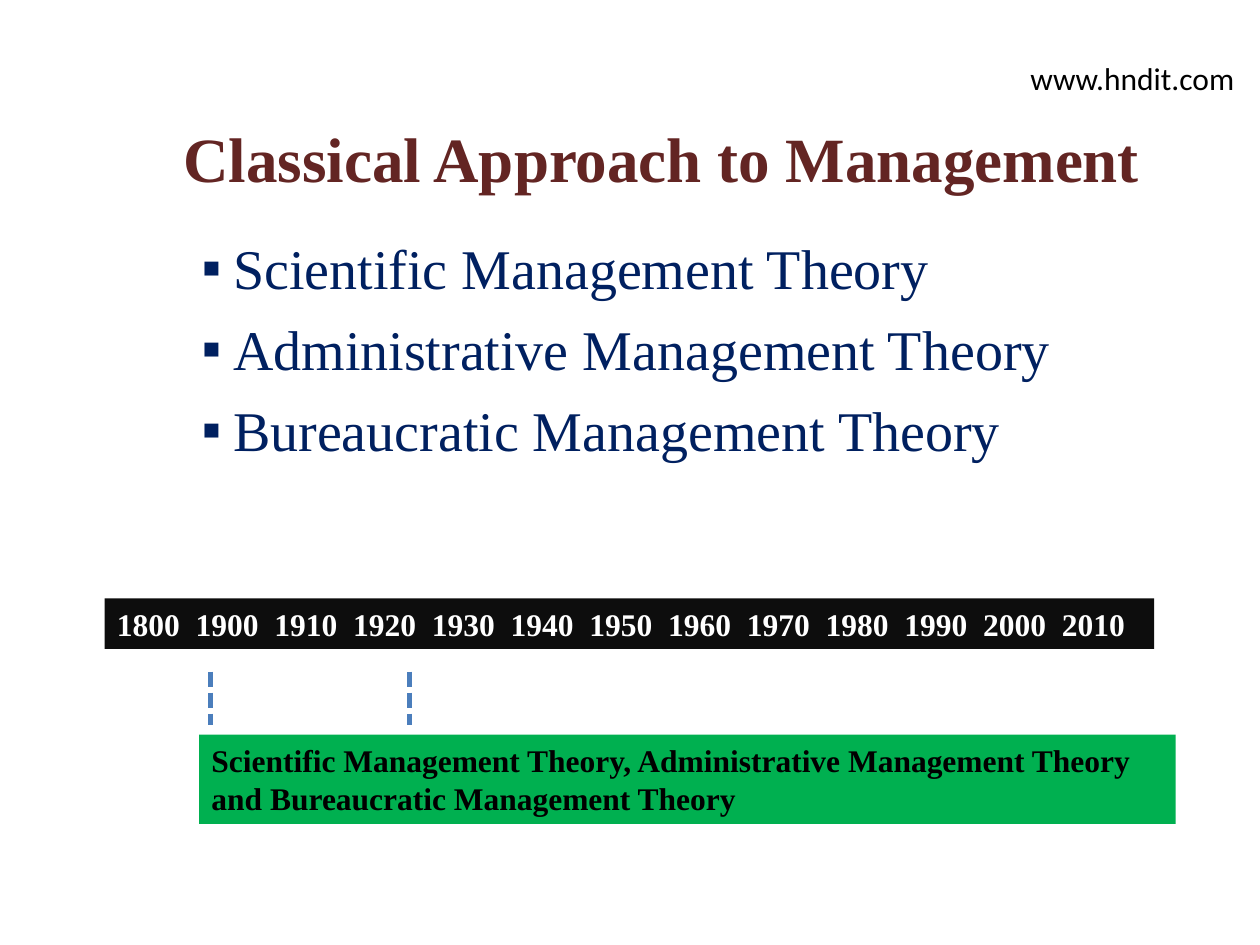
from lxml.etree import SubElement
from pptx import Presentation
from pptx.dml.color import RGBColor
from pptx.enum.dml import MSO_LINE
from pptx.enum.shapes import MSO_CONNECTOR, MSO_SHAPE
from pptx.enum.text import MSO_ANCHOR, PP_ALIGN
from pptx.oxml.ns import qn
from pptx.util import Inches, Pt

TITLE = "Classical Approach to Management"
THEORIES = [
    "Scientific Management Theory",
    "Administrative Management Theory",
    "Bureaucratic Management Theory",
]
YEARS = [1800, *range(1900, 2011, 10)]
PERIOD = ("Scientific Management Theory, Administrative Management Theory "
          "and Bureaucratic Management Theory")
SITE = "www.hndit.com"

COLORS = {"title": "632523", "list": "002060", "axis": "0D0D0D", "year": "FFFFFF",
          "period": "00B050", "text": "000000", "marker": "4B7EBC"}
SERIF = "Times New Roman"
YEAR_STEP = 0.625
MARKERS = (1.67, 3.25)
MARKER_TOP, MARKER_BOTTOM = 5.33, 5.75


def color(name):
    return RGBColor.from_string(COLORS[name])


def place(s, left, top, width, height):
    s.left, s.top, s.width, s.height = map(Inches, (left, top, width, height))


def style(p, size, color_name, bold=False, name=SERIF):
    for r in p.runs:
        r.font.name, r.font.size, r.font.bold = name, Pt(size), bold
        r.font.color.rgb = color(color_name)


def add_bar(slide, box, fill, text, text_color):
    s = slide.shapes.add_shape(MSO_SHAPE.RECTANGLE, *map(Inches, box))
    s.shadow.inherit = False
    s.fill.solid()
    s.fill.fore_color.rgb = color(fill)
    s.line.fill.background()
    tf = s.text_frame
    tf.word_wrap = True
    tf.vertical_anchor = MSO_ANCHOR.TOP
    tf.text = text
    p = tf.paragraphs[0]
    p.alignment = PP_ALIGN.LEFT
    style(p, 18, text_color, bold=True)
    return p


def add_marker(slide, x):
    line = slide.shapes.add_connector(
        MSO_CONNECTOR.STRAIGHT, *map(Inches, (x, MARKER_TOP, x, MARKER_BOTTOM)))
    line.line.color.rgb = color("marker")
    line.line.width = Pt(3)
    line.line.dash_style = MSO_LINE.SQUARE_DOT
    SubElement(line._element.spPr, qn("a:effectLst"))


def main():
    prs = Presentation()
    prs.slide_width, prs.slide_height = Inches(10), Inches(7.5)
    slide = prs.slides.add_slide(prs.slide_layouts[1])
    title, body = slide.placeholders

    place(title, 0.75, 0.85, 9, 0.8)
    title.text_frame.text = TITLE
    title.text_frame.vertical_anchor = MSO_ANCHOR.MIDDLE
    style(title.text_frame.paragraphs[0], 36, "title", bold=True)

    place(body, 0.5, 1.8, 9, 2.7)
    tf = body.text_frame
    tf.text = "\n".join(THEORIES)
    for i, p in enumerate(tf.paragraphs):
        p.level = 2
        p.space_before = Pt(8 if i else 0)
        pPr = p._p.get_or_add_pPr()
        SubElement(pPr, qn("a:buFont"), typeface="Arial")
        SubElement(pPr, qn("a:buChar"), char="▪")
        style(p, 32, "list")

    axis = add_bar(slide, (0.83, 4.75, 8.33, 0.4), "axis",
                   "\t".join(map(str, YEARS)), "year")
    tabs = SubElement(axis._p.get_or_add_pPr(), qn("a:tabLst"))
    for i in range(1, len(YEARS)):
        SubElement(tabs, qn("a:tab"), pos=str(Inches(i * YEAR_STEP)), algn="l")

    add_bar(slide, (1.58, 5.83, 7.75, 0.71), "period", PERIOD, "text")
    for x in MARKERS:
        add_marker(slide, x)

    site = slide.shapes.add_textbox(*map(Inches, (8.08, 0.42, 1.92, 0.4)))
    site.text_frame.word_wrap = True
    site.text_frame.text = SITE
    style(site.text_frame.paragraphs[0], 18, "text", name="Calibri")

    prs.save("out.pptx")


if __name__ == "__main__":
    main()
